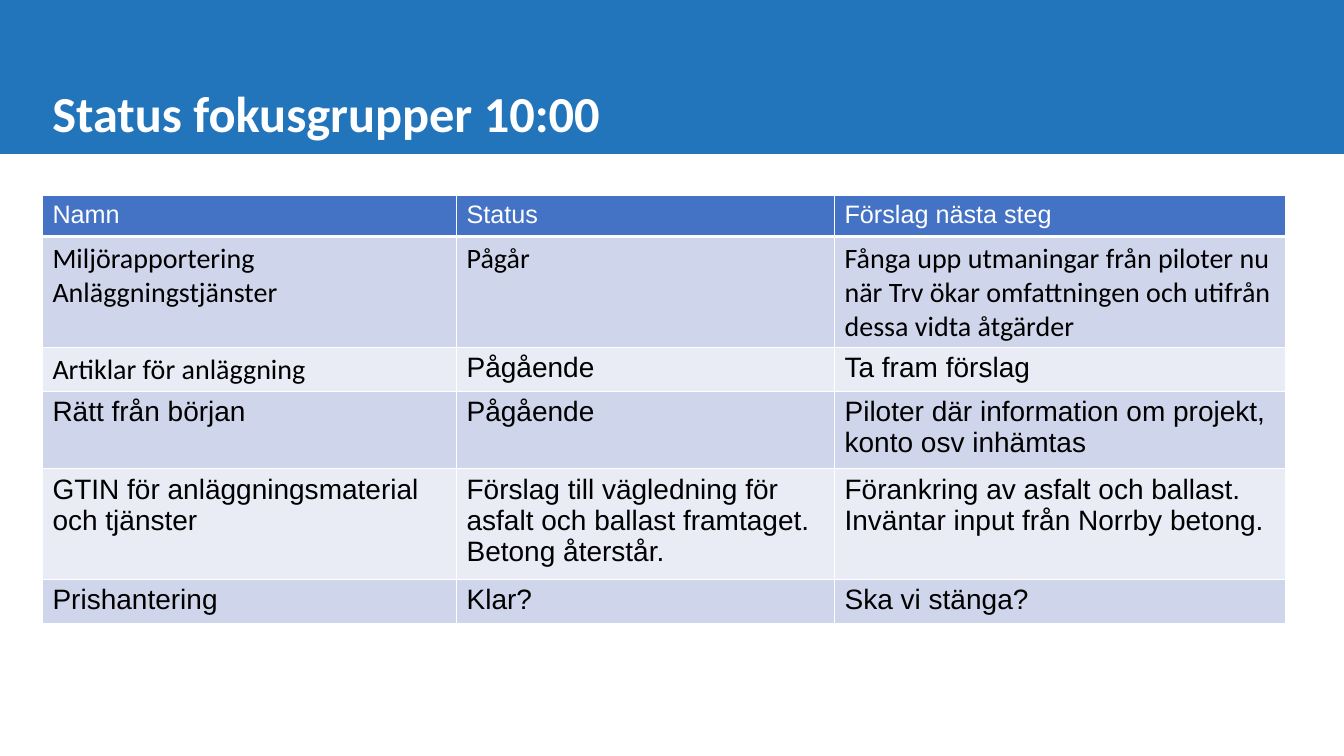
from lxml.etree import SubElement
from pptx import Presentation
from pptx.dml.color import RGBColor
from pptx.enum.shapes import MSO_SHAPE
from pptx.enum.text import MSO_ANCHOR
from pptx.oxml.ns import qn
from pptx.util import Pt

COLORS = {
    "banner": "2375BB",
    "header": "4472C4",
    "odd": "CFD5EA",
    "even": "E9EBF5",
    "white": "FFFFFF",
    "black": "000000",
}
HEADINGS = ["Namn", "Status", "Förslag nästa steg"]
GROUPS = [
    ["Miljörapportering Anläggningstjänster\u00a0", "Pågår",
     "Fånga upp utmaningar från piloter nu när Trv ökar omfattningen och utifrån dessa vidta åtgärder"],
    ["Artiklar för anläggning", "Pågående", "Ta fram förslag"],
    ["Rätt från början\u00a0", "Pågående", "Piloter där information om projekt, konto osv inhämtas"],
    ["GTIN för anläggningsmaterial och tjänster",
     "Förslag till vägledning för asfalt och ballast framtaget.\u00a0\nBetong återstår.",
     "Förankring av asfalt och ballast.\nInväntar input från Norrby betong."],
    ["Prishantering", "Klar?", "Ska vi stänga?"],
]
CALIBRI_CELLS = {(1, 0), (1, 1), (1, 2), (2, 0)}


class StatusSlide:
    """Holds the colours and the current slide, and draws its elements."""

    def __init__(self, slide, colors):
        self.slide = slide
        self.colors = colors

    def rgb(self, name):
        return RGBColor.from_string(self.colors[name])

    def add_text(self, frame, text, font, size, color, bold=False):
        for index, line in enumerate(text.split("\n")):
            paragraph = frame.add_paragraph() if index else frame.paragraphs[0]
            run = paragraph.add_run()
            run.text = line
            run.font.name = font
            run.font.size = Pt(size)
            run.font.bold = bold
            run.font.color.rgb = self.rgb(color)

    def banner(self, width, height):
        band = self.slide.shapes.add_shape(MSO_SHAPE.RECTANGLE, 0, 0, Pt(width), Pt(height))
        band.shadow.inherit = False
        band.fill.solid()
        band.fill.fore_color.rgb = self.rgb("banner")
        band.line.fill.background()

    def title(self, text, left, top, width, height):
        heading = self.slide.shapes.add_textbox(Pt(left), Pt(top), Pt(width), Pt(height))
        frame = heading.text_frame
        frame.word_wrap = True
        frame.vertical_anchor = MSO_ANCHOR.BOTTOM
        frame.margin_bottom = 0
        self.add_text(frame, text, "Calibri", 36, "white", True)
        frame.paragraphs[0].line_spacing = 0.9

    def borders(self, cell, row):
        properties = cell._tc.get_or_add_tcPr()
        widths = {"lnL": 1, "lnR": 1, "lnT": 3 if row == 1 else 1, "lnB": 3 if row == 0 else 1}
        for side, width in widths.items():
            line = SubElement(properties, qn("a:" + side), w=str(Pt(width)))
            fill = SubElement(line, qn("a:solidFill"))
            SubElement(fill, qn("a:srgbClr"), val=self.colors["white"])

    def table(self, rows, left, top, column_widths, row_height):
        status = self.slide.shapes.add_table(
            len(rows), len(column_widths), Pt(left), Pt(top),
            Pt(sum(column_widths)), Pt(row_height * len(rows))).table
        for column, width in zip(status.columns, column_widths):
            column.width = Pt(width)
        for r, texts in enumerate(rows):
            status.rows[r].height = Pt(row_height)
            band = "header" if r == 0 else "odd" if r % 2 else "even"
            for c, text in enumerate(texts):
                cell = status.cell(r, c)
                self.borders(cell, r)
                cell.fill.solid()
                cell.fill.fore_color.rgb = self.rgb(band)
                font = "Calibri" if (r, c) in CALIBRI_CELLS else "Arial"
                size, color = (20, "black") if r else (18, "white")
                self.add_text(cell.text_frame, text, font, size, color)


def main():
    deck = Presentation()
    deck.slide_width, deck.slide_height = Pt(960), Pt(540)
    page = StatusSlide(deck.slides.add_slide(deck.slide_layouts[6]), COLORS)
    page.banner(960, 110)
    page.title("Status fokusgrupper 10:00", 30.3, 16, 897, 86.4)
    page.table([HEADINGS, *GROUPS], 30.3, 139.8, [295.8, 270, 322.2], 29.2)
    deck.save("out.pptx")


if __name__ == "__main__":
    main()
